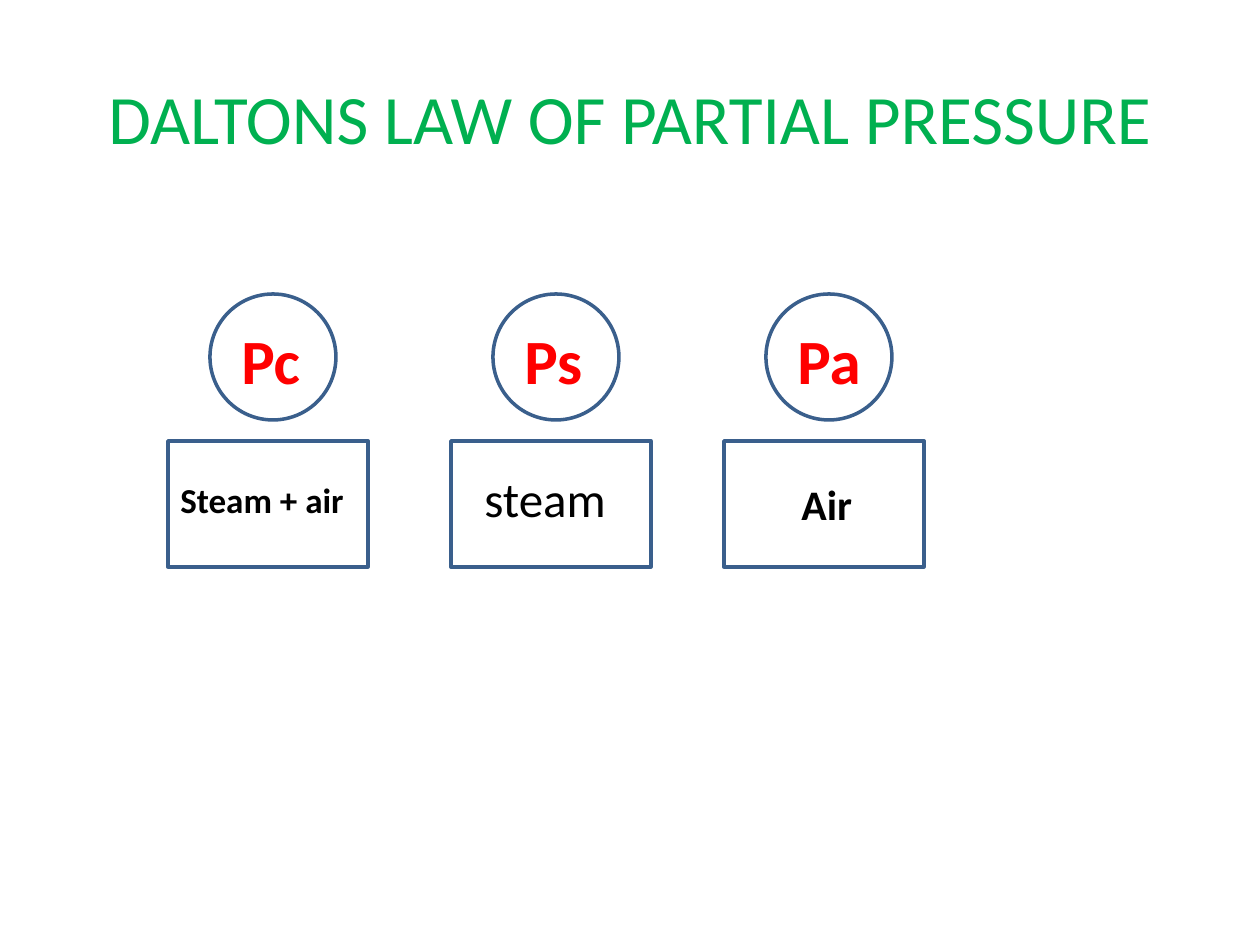
import pptx
import pptx.util
import pptx.dml.color
import pptx.enum.shapes
import pptx.enum.text

TITLE = "DALTONS LAW OF PARTIAL PRESSURE"
# box left, pressure symbol, symbol width, content, content (left, top, width, height), size, bold
VESSELS = [
    (168, "Pc", 86, "Steam + air", (168, 472, 190, 55), 20, True),
    (451, "Ps", 86, "steam", (472, 462, 149, 72), 28, False),
    (724, "Pa", 107, "Air", (789, 472, 77, 63), 24, True),
]
COLORS = {"title": "00B050", "outline": "3A5F8C", "symbol": "FF0000", "content": "000000"}
FONT = "Calibri"
PX = 914400 // 126

BOX_TOP, BOX_WIDTH, BOX_HEIGHT = 441, 200, 126
GAUGE_INSET, GAUGE_TOP, GAUGE_SIZE = 42, 294, 126
SYMBOL_INSET, SYMBOL_TOP, SYMBOL_HEIGHT = 61, 315, 89

SHAPES = pptx.enum.shapes.MSO_SHAPE
ALIGN = pptx.enum.text.PP_ALIGN
ANCHOR = pptx.enum.text.MSO_ANCHOR


def emu(place):
    return [length * PX for length in place]


def rgb(role):
    return pptx.dml.color.RGBColor.from_string(COLORS[role])


def add_outline(slide, kind, place):
    outline = slide.shapes.add_shape(kind, *emu(place))
    outline.shadow.inherit = False
    outline.fill.background()
    outline.line.color.rgb = rgb("outline")
    outline.line.width = pptx.util.Pt(2)


def add_label(slide, text, place, size, role, bold=False, wrap=True,
              align=ALIGN.LEFT, anchor=ANCHOR.TOP):
    frame = slide.shapes.add_textbox(*emu(place)).text_frame
    frame.word_wrap = wrap
    frame.vertical_anchor = anchor
    paragraph = frame.paragraphs[0]
    paragraph.text = text
    paragraph.alignment = align
    paragraph.font.name = FONT
    paragraph.font.size = pptx.util.Pt(size)
    paragraph.font.bold = bold
    paragraph.font.color.rgb = rgb(role)


def main():
    deck = pptx.Presentation()
    deck.slide_width, deck.slide_height = emu((1260, 945))
    slide = deck.slides.add_slide(deck.slide_layouts[6])

    add_label(slide, TITLE, (63, 38, 1134, 157), 39.6, "title",
              align=ALIGN.CENTER, anchor=ANCHOR.MIDDLE)

    for left, symbol, symbol_width, content, place, size, bold in VESSELS:
        add_outline(slide, SHAPES.RECTANGLE, (left, BOX_TOP, BOX_WIDTH, BOX_HEIGHT))
        add_label(slide, content, place, size, "content", bold, wrap=False)
        add_outline(slide, SHAPES.OVAL,
                    (left + GAUGE_INSET, GAUGE_TOP, GAUGE_SIZE, GAUGE_SIZE))
        add_label(slide, symbol,
                  (left + SYMBOL_INSET, SYMBOL_TOP, symbol_width, SYMBOL_HEIGHT),
                  36, "symbol", bold=True)

    deck.save("out.pptx")


if __name__ == "__main__":
    main()
